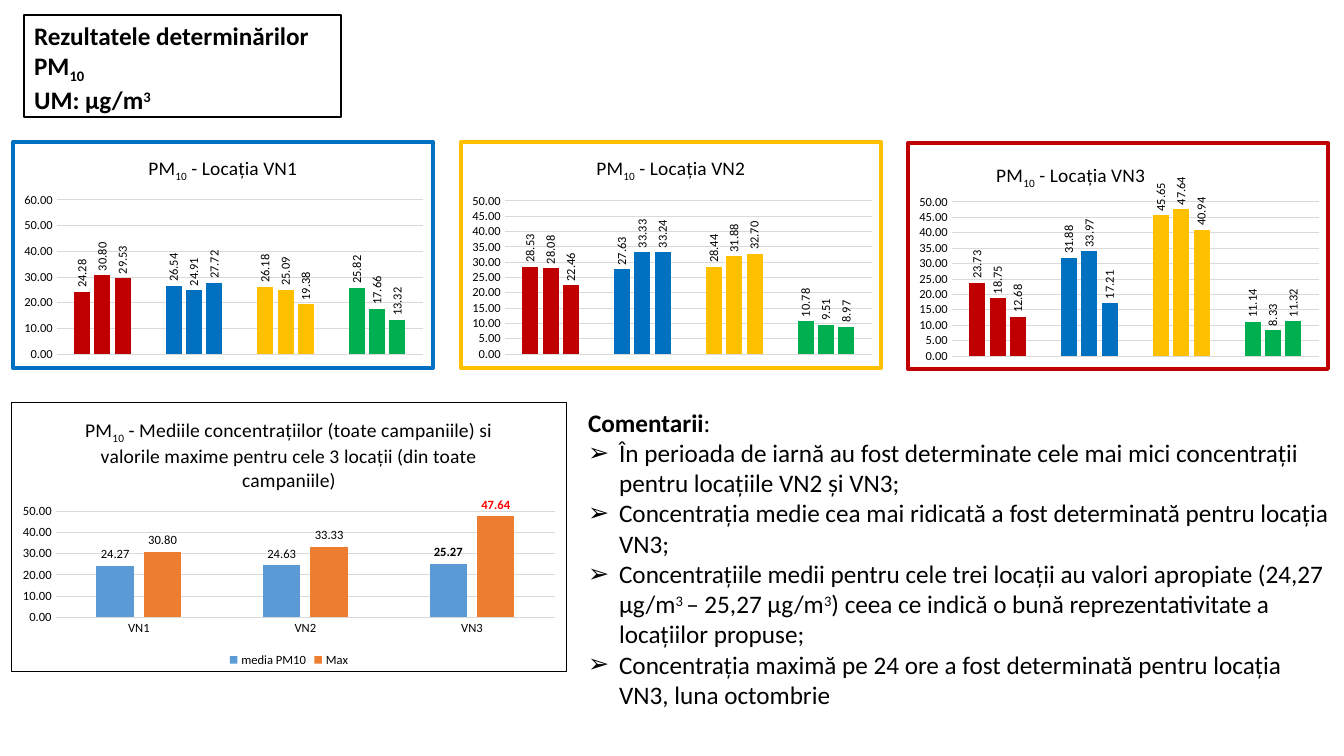
"""Build the PM10 results slide with four column charts and comments."""
from pptx import Presentation
from pptx.chart.data import CategoryChartData
from pptx.dml.color import RGBColor
from pptx.enum.chart import (XL_CHART_TYPE, XL_LABEL_POSITION,
                             XL_LEGEND_POSITION, XL_TICK_MARK)
from pptx.enum.text import MSO_ANCHOR, MSO_AUTO_SIZE, PP_ALIGN
from pptx.oxml import parse_xml
from pptx.oxml.ns import nsdecls, qn
from pptx.util import Emu, Pt

FONT = "Calibri"
BLACK, WHITE, GRID = "000000", "FFFFFF", "D9D9D9"
RED, BLUE, GOLD, GREEN = "C00000", "0070C0", "FFC000", "00B050"
CAMPAIGN_COLOURS = [RED, BLUE, GOLD, GREEN]
SUB, SUPER = {"baseline": -25}, {"baseline": 30}

HEADING = [
    ["Rezultatele determinărilor"],
    ["PM", ("10", SUB)],
    ["UM: µg/m", ("3", SUPER)],
]
COMMENTS = [
    [("Comentarii", {"bold": True}), ":"],
    ["În perioada de iarnă au fost determinate cele mai mici concentrații "
     "pentru locațiile VN2 și VN3;"],
    ["Concentrația medie cea mai ridicată a fost determinată pentru locația VN3;"],
    ["Concentrațiile medii pentru cele trei locații au valori apropiate (24,27 µg/m",
     ("3 ", SUPER), "– 25,27 µg/m", ("3", SUPER),
     ") ceea ce indică o bună reprezentativitate a locațiilor propuse;"],
    ["Concentrația maximă pe 24 ore a fost determinată pentru locația VN3, "
     "luna octombrie"],
]
LOCATIONS = [
    dict(title=" - Locația VN1", frame=(11, 140, 424, 230), plot=(55, 199, 370, 157),
         border=BLUE, top=60, step=10,
         series=[(24.28, 26.54, 26.18, 25.82), (30.80, 24.91, 25.09, 17.66),
                 (29.53, 27.72, 19.38, 13.32)]),
    dict(title=" - Locația VN2", frame=(459, 140, 424, 230), plot=(503, 200, 371, 156),
         border=GOLD, top=50, step=5,
         series=[(28.53, 27.63, 28.44, 10.78), (28.08, 33.33, 31.88, 9.51),
                 (22.46, 33.24, 32.70, 8.97)]),
    dict(title=" - Locația VN3", frame=(906, 141, 424, 230), plot=(950, 201, 371, 157),
         border=RED, top=50, step=5, title_at=(992, 157),
         series=[(23.73, 31.88, 45.65, 11.14), (18.75, 33.97, 47.64, 8.33),
                 (12.68, 17.21, 40.94, 11.32)]),
]
SUMMARY = dict(
    title=" - Mediile concentrațiilor (toate campaniile) si valorile maxime "
          "pentru cele 3 locații (din toate campaniile)",
    frame=(11, 402, 556, 270), plot=(55, 511, 501, 107), border=BLACK, top=50, step=10)
SUMMARY_SERIES = [
    ("media PM10", (24.27, 24.63, 25.27), "5B9BD5", BLACK),
    ("Max", (30.80, 33.33, 47.64), "ED7D31", "FF0000"),
]


def px(length):
    return Emu(round(length * 914400 / 100.8))


def colour(value):
    return RGBColor.from_string(value)


def set_font(font, size, bold=False, ink=BLACK):
    font.name, font.size, font.bold = FONT, Pt(size), bold
    font.color.rgb = colour(ink)


def paint(fill, value):
    fill.solid()
    fill.fore_color.rgb = colour(value)


def write(para, text, size=18, bold=False, baseline=0):
    span = para.add_run()
    span.text = text
    set_font(span.font, size, bold)
    if baseline:
        span._r.get_or_add_rPr().set("baseline", str(baseline * 1000))


def write_spans(para, spans, **style):
    for item in spans:
        text, extra = (item, {}) if isinstance(item, str) else item
        write(para, text, **{**style, **extra})


def fill_box(box, frame, paragraphs, **style):
    box.left, box.top, box.width, box.height = map(px, frame)
    text_frame = box.text_frame
    text_frame.word_wrap = True
    text_frame.auto_size = MSO_AUTO_SIZE.NONE
    text_frame.vertical_anchor = MSO_ANCHOR.TOP
    for index, spans in enumerate(paragraphs):
        para = text_frame.add_paragraph() if index else text_frame.paragraphs[0]
        para.alignment, para.line_spacing = PP_ALIGN.LEFT, 1.0
        para.space_before = para.space_after = Pt(0)
        write_spans(para, spans, **style)
    return text_frame.paragraphs


def set_bullet(para, mark=None):
    indent = px(31) if mark else 0
    properties = para._p.get_or_add_pPr()
    properties.set("marL", str(indent))
    properties.set("indent", str(-indent))
    tag = f'a:buChar char="{mark}"' if mark else "a:buNone"
    properties.append(parse_xml(f"<{tag} {nsdecls('a')}/>"))


def place_before(anchor, frame, area, inner=False):
    left, top, width, height = frame
    parts = {"xMode": "edge", "yMode": "edge",
             "x": (area[0] - left) / width, "y": (area[1] - top) / height}
    if inner:
        parts = {"layoutTarget": "inner", **parts,
                 "w": area[2] / width, "h": area[3] / height}
    for old in anchor.getparent().findall(qn("c:layout")):
        old.getparent().remove(old)
    body = "".join(f'<c:{key} val="{value}"/>' for key, value in parts.items())
    anchor.addprevious(parse_xml(
        f"<c:layout {nsdecls('c')}><c:manualLayout>{body}</c:manualLayout></c:layout>"))


def add_columns(slide, data, title, frame, plot, border, top, step,
                border_width=3, title_at=None):
    chart = slide.shapes.add_chart(
        XL_CHART_TYPE.COLUMN_CLUSTERED, *map(px, frame), data).chart
    set_font(chart.font, 10)
    chart.has_legend = False
    write_spans(chart.chart_title.text_frame.paragraphs[0],
                ["PM", ("10", SUB), title], size=14)
    columns = chart.plots[0]
    columns.gap_width, columns.overlap, columns.vary_by_categories = 219, -27, False
    values = chart.value_axis
    values.minimum_scale, values.maximum_scale, values.major_unit = 0, top, step
    values.format.line.fill.background()
    values.major_gridlines.format.line.color.rgb = colour(GRID)
    values.major_gridlines.format.line.width = Pt(0.75)
    values.tick_labels.number_format = "0.00"
    values.tick_labels.number_format_is_linked = False
    for axis in (values, chart.category_axis):
        axis.major_tick_mark = axis.minor_tick_mark = XL_TICK_MARK.NONE
        set_font(axis.tick_labels.font, 9)
    root = chart._chartSpace
    root.find(qn("c:chart")).addnext(parse_xml(
        f"<c:spPr {nsdecls('c', 'a')}><a:solidFill><a:srgbClr val=\"{WHITE}\"/></a:solidFill>"
        f'<a:ln w="{Pt(border_width)}"><a:solidFill><a:srgbClr val="{border}"/>'
        "</a:solidFill><a:round/></a:ln></c:spPr>"))
    place_before(root.find(".//" + qn("c:barChart")), frame, plot, inner=True)
    if title_at:
        overlay = root.find(".//" + qn("c:title")).find(qn("c:overlay"))
        place_before(overlay, frame, title_at)
    return chart


def label_values(series, turned=False):
    labels = series.data_labels
    labels.show_value = True
    labels.number_format, labels.number_format_is_linked = "#,##0.00", False
    labels.position = XL_LABEL_POSITION.OUTSIDE_END
    set_font(labels.font, 9)
    if turned:
        labels._element.find(".//" + qn("a:bodyPr")).set("rot", "-5400000")


def add_location(slide, series, **layout):
    data = CategoryChartData()
    data.categories = ["1", "2", "3", "4"]
    for number, values in enumerate(series, 1):
        data.add_series(f"Series {number}", values)
    chart = add_columns(slide, data, **layout)
    chart.category_axis.visible = False
    for series_item in chart.plots[0].series:
        label_values(series_item, turned=True)
        for index, value in enumerate(CAMPAIGN_COLOURS):
            paint(series_item.points[index].format.fill, value)


def add_summary(slide):
    data = CategoryChartData()
    data.categories = ["VN1", "VN2", "VN3"]
    for name, values, *_ in SUMMARY_SERIES:
        data.add_series(name, values)
    chart = add_columns(slide, data, border_width=1, **SUMMARY)
    chart.category_axis.format.line.color.rgb = colour(GRID)
    chart.category_axis.format.line.width = Pt(0.75)
    chart.has_legend = True
    chart.legend.position = XL_LEGEND_POSITION.BOTTOM
    chart.legend.include_in_layout = False
    set_font(chart.legend.font, 9)
    for series, (_, _, fill, ink) in zip(chart.plots[0].series, SUMMARY_SERIES):
        paint(series.format.fill, fill)
        label_values(series)
        highest = series.points[2].data_label
        set_font(highest.font, 9, bold=True, ink=ink)
        highest.position = XL_LABEL_POSITION.OUTSIDE_END


def main():
    deck = Presentation()
    deck.slide_width, deck.slide_height = px(1344), px(756)
    slide = deck.slides.add_slide(deck.slide_layouts[1])
    heading, comments = slide.placeholders
    fill_box(heading, (24, 15, 317, 102), HEADING, bold=True)
    paint(heading.fill, WHITE)
    heading.line.color.rgb, heading.line.width = colour(BLACK), Pt(1)
    for index, para in enumerate(fill_box(comments, (578, 402, 766, 315), COMMENTS)):
        set_bullet(para, "➢" if index else None)
    for location in LOCATIONS:
        add_location(slide, **location)
    add_summary(slide)
    deck.save("out.pptx")


if __name__ == "__main__":
    main()
